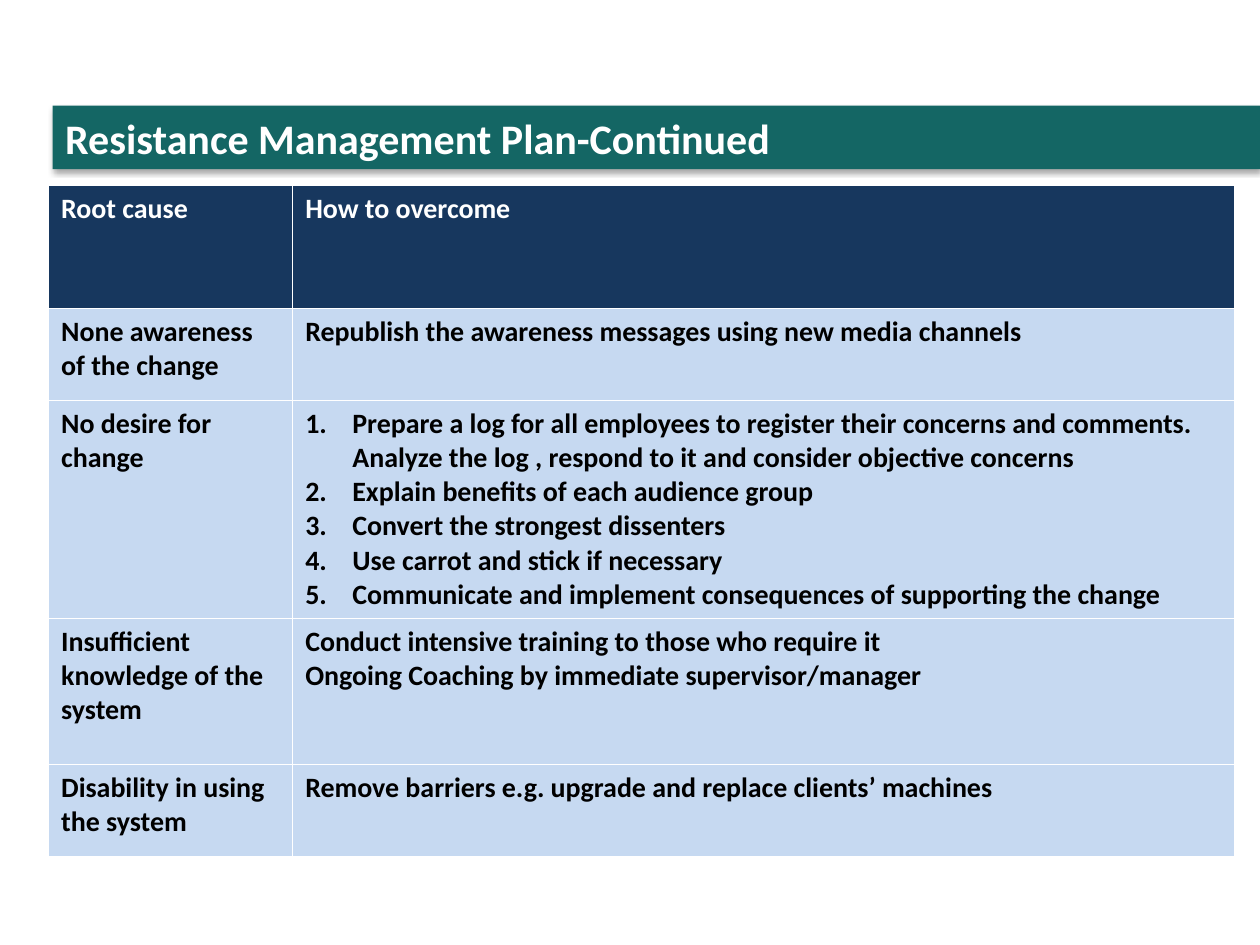
from lxml import etree
from pptx import Presentation
from pptx.dml.color import RGBColor
from pptx.enum.text import MSO_ANCHOR, MSO_AUTO_SIZE, PP_ALIGN
from pptx.oxml.ns import qn
from pptx.util import Cm, Pt

LEFT = PP_ALIGN.LEFT
MIDDLE = MSO_ANCHOR.MIDDLE
NO_AUTOFIT = MSO_AUTO_SIZE.NONE

WHITE = RGBColor(0xFF, 0xFF, 0xFF)
BLACK = RGBColor(0x00, 0x00, 0x00)
TEAL = RGBColor(0x14, 0x66, 0x64)
NAVY = RGBColor(0x17, 0x37, 0x5E)
PALE_BLUE = RGBColor(0xC6, 0xD9, 0xF1)

FONT = "Calibri"
TITLE_ONLY = 5
COLUMN_WIDTHS = (Cm(4.92), Cm(19))
ROW_HEIGHTS = (Cm(2.49), Cm(1.85), Cm(4.32), Cm(2.95), Cm(1.85))
NUMBER_INDENT = Cm(0.95)

HEADINGS = ("Root cause", "How to overcome")
REMEDIES = (
    ("None awareness of the change",
     ["Republish the awareness messages using new media channels"]),
    ("No desire for change",
     ["Prepare a log for all employees to register their concerns and comments. "
      "Analyze the log , respond to it and consider objective concerns",
      "Explain benefits of each audience group",
      "Convert the strongest dissenters",
      "Use carrot and stick if necessary",
      "Communicate and implement consequences of supporting the change"]),
    ("Insufficient knowledge of the system",
     ["Conduct intensive training to those who require it",
      "Ongoing Coaching by immediate supervisor/manager"]),
    ("Disability in using the system",
     ["Remove barriers e.g. upgrade and replace clients’ machines"]),
)
NUMBERED_CAUSE = "No desire for change"


def set_font(paragraph, size, color):
    font = paragraph.font
    font.name, font.size, font.bold = FONT, Pt(size), True
    font.color.rgb = color


def add_solid_color(parent, color):
    fill = etree.SubElement(parent, qn("a:solidFill"))
    return etree.SubElement(fill, qn("a:srgbClr"), val=str(color))


def add_drop_shadow(shape):
    effects = etree.SubElement(shape._element.spPr, qn("a:effectLst"))
    shadow = etree.SubElement(
        effects, qn("a:outerShdw"), blurRad=str(Pt(3.1)), dist=str(Pt(1.8)),
        dir="5400000", rotWithShape="0")
    shade = etree.SubElement(shadow, qn("a:srgbClr"), val=str(BLACK))
    etree.SubElement(shade, qn("a:alpha"), val="35000")


def add_borders(cell):
    properties = cell._tc.get_or_add_tcPr()
    for side in ("lnL", "lnR", "lnT", "lnB"):
        line = etree.SubElement(properties, qn(f"a:{side}"), w=str(Pt(1)))
        add_solid_color(line, WHITE)


def number_paragraph(paragraph):
    properties = paragraph._p.get_or_add_pPr()
    properties.set("marL", str(NUMBER_INDENT))
    properties.set("indent", str(-NUMBER_INDENT))
    etree.SubElement(properties, qn("a:buFont"), typeface="+mj-lt")
    etree.SubElement(properties, qn("a:buAutoNum"), type="arabicPeriod")


def fill_cell(cell, lines, background, color, numbered=False):
    add_borders(cell)
    cell.fill.solid()
    cell.fill.fore_color.rgb = background
    cell.text_frame.text = "\n".join(lines)
    for paragraph in cell.text_frame.paragraphs:
        if numbered:
            number_paragraph(paragraph)
        set_font(paragraph, 16, color)


def format_title(title, text):
    title.left, title.top = Cm(1.06), Cm(2.13)
    title.width, title.height = Cm(24.34), Cm(1.28)
    title.fill.solid()
    title.fill.fore_color.rgb = TEAL
    title.line.fill.background()
    add_drop_shadow(title)
    frame = title.text_frame
    frame.text = text
    frame.auto_size = NO_AUTOFIT
    frame.vertical_anchor = MIDDLE
    frame.paragraphs[0].alignment = LEFT
    set_font(frame.paragraphs[0], 24, WHITE)


def add_remedy_table(slide):
    table = slide.shapes.add_table(
        len(ROW_HEIGHTS), len(COLUMN_WIDTHS), Cm(0.98), Cm(3.73),
        sum(COLUMN_WIDTHS), sum(ROW_HEIGHTS)).table
    for column, width in zip(table.columns, COLUMN_WIDTHS):
        column.width = width
    for row, height in zip(table.rows, ROW_HEIGHTS):
        row.height = height
    for index, heading in enumerate(HEADINGS):
        fill_cell(table.cell(0, index), [heading], NAVY, WHITE)
    for index, (cause, actions) in enumerate(REMEDIES, start=1):
        fill_cell(table.cell(index, 0), [cause], PALE_BLUE, BLACK)
        fill_cell(table.cell(index, 1), actions, PALE_BLUE, BLACK,
                  numbered=cause == NUMBERED_CAUSE)


def main():
    presentation = Presentation()
    presentation.slide_width, presentation.slide_height = Cm(25.4), Cm(19.05)
    slide = presentation.slides.add_slide(presentation.slide_layouts[TITLE_ONLY])
    format_title(slide.shapes.title, "Resistance Management Plan-Continued")
    add_remedy_table(slide)
    presentation.save("out.pptx")


if __name__ == "__main__":
    main()
